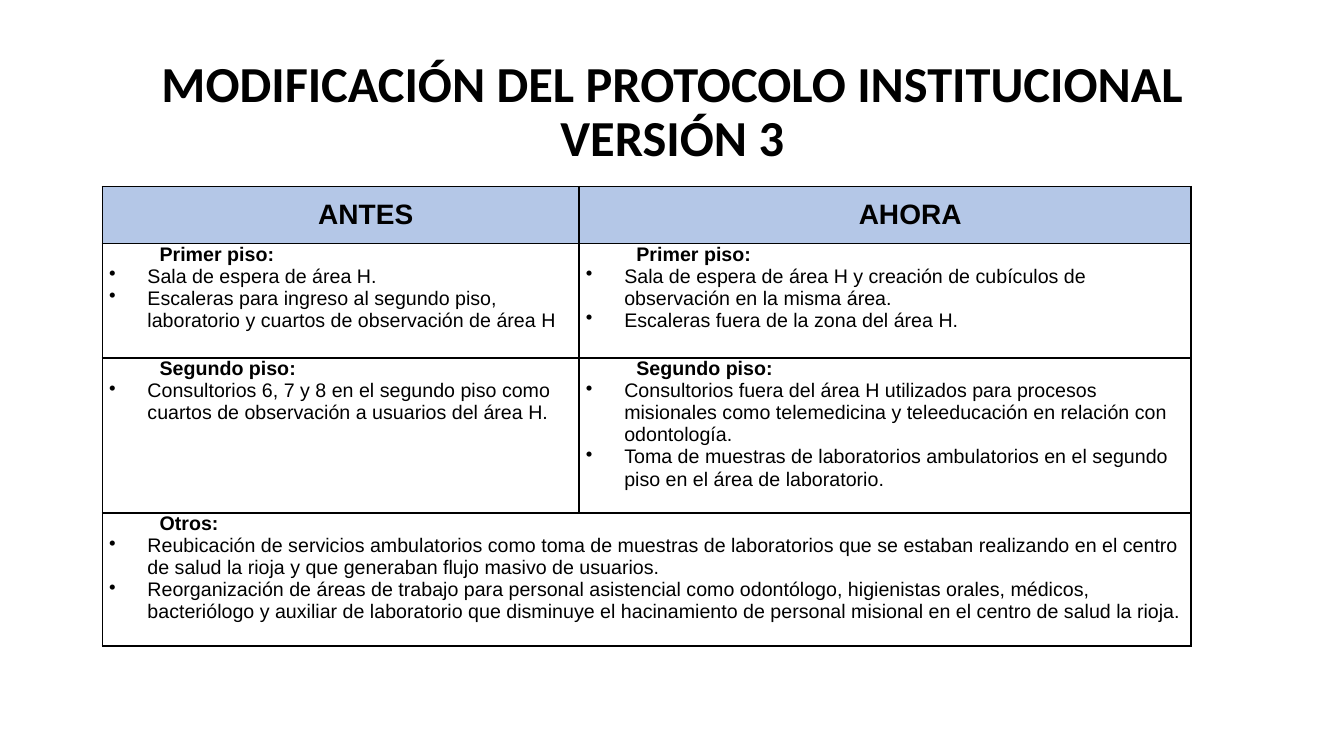
from dataclasses import dataclass

import pptx
import pptx.dml.color
import pptx.enum.text
import pptx.oxml
import pptx.oxml.ns
import pptx.presentation
import pptx.slide
import pptx.table
import pptx.text.text
import pptx.util

SLIDE_WIDTH = pptx.util.Inches(13.33)
SLIDE_HEIGHT = pptx.util.Inches(7.5)
COLORS = {"text": "000000", "border": "000000", "header": "B4C7E7", "body": "FFFFFF"}
TITLE_FONT = "Calibri"
TABLE_FONT = "Arial"

# Percentages of the slide's width (columns) and height (rows)
COLUMN_SHARES = (35.48, 45.54)
ROW_SHARES = (7.5, 15.2, 20.5, 17.6)

HEADING_INDENT = pptx.util.Inches(0.5)
BULLET_INDENT = pptx.util.Inches(0.38)
CENTER = pptx.enum.text.PP_ALIGN.CENTER
MIDDLE = pptx.enum.text.MSO_ANCHOR.MIDDLE


@dataclass(frozen=True)
class Entry:
    row: int
    column: int
    heading: str
    points: tuple[str, ...] = ()


ENTRIES = (
    Entry(0, 0, "ANTES"),
    Entry(0, 1, "AHORA"),
    Entry(1, 0, "Primer piso:", (
        "Sala de espera de área H.",
        "Escaleras para ingreso al segundo piso, laboratorio y cuartos de "
        "observación de área H",
    )),
    Entry(1, 1, "Primer piso:", (
        "Sala de espera de área H y creación de cubículos de observación en la misma área.",
        "Escaleras fuera de la zona del área H.",
    )),
    Entry(2, 0, "Segundo piso:", (
        "Consultorios 6, 7 y 8 en el segundo piso como cuartos de observación "
        "a usuarios del área H.",
    )),
    Entry(2, 1, "Segundo piso:", (
        "Consultorios fuera del área H utilizados para procesos misionales como "
        "telemedicina y teleeducación en relación con odontología.",
        "Toma de muestras de laboratorios ambulatorios en el segundo piso en el "
        "área de laboratorio.",
    )),
    Entry(3, 0, "Otros:", (
        "Reubicación de servicios ambulatorios como toma de muestras de laboratorios "
        "que se estaban realizando en el centro de salud la rioja y que generaban "
        "flujo masivo de usuarios.",
        "Reorganización de áreas de trabajo para personal asistencial como odontólogo, "
        "higienistas orales, médicos, bacteriólogo y auxiliar de laboratorio que "
        "disminuye el hacinamiento de personal misional en el centro de salud la rioja.",
    )),
)


def across(percent: float) -> int:
    return round(SLIDE_WIDTH * percent / 100)


def down(percent: float) -> int:
    return round(SLIDE_HEIGHT * percent / 100)


def rgb(name: str) -> pptx.dml.color.RGBColor:
    return pptx.dml.color.RGBColor.from_string(COLORS[name])


def add_run(paragraph: pptx.text.text._Paragraph, text: str, font: str,
            size: float, bold: bool) -> None:
    run = paragraph.add_run()
    run.text = text
    run.font.name = font
    run.font.size = pptx.util.Pt(size)
    run.font.bold = bold
    run.font.color.rgb = rgb("text")


def indent(paragraph: pptx.text.text._Paragraph, left: int, bullet: bool = False) -> None:
    properties = paragraph._p.get_or_add_pPr()
    properties.set("marL", str(left))
    properties.set("indent", str(-left if bullet else 0))
    if bullet:
        mark = pptx.oxml.parse_xml(
            f'<a:buChar {pptx.oxml.ns.nsdecls("a")} char="•"/>')
        properties.append(mark)


def add_borders(cell: pptx.table._Cell) -> None:
    properties = cell._tc.get_or_add_tcPr()
    for side in ("lnL", "lnR", "lnT", "lnB"):
        properties.append(pptx.oxml.parse_xml(
            f'<a:{side} {pptx.oxml.ns.nsdecls("a")} w="{pptx.util.Pt(1)}">'
            f'<a:solidFill><a:srgbClr val="{COLORS["border"]}"/></a:solidFill>'
            f'</a:{side}>'))


def fill_entry(cell: pptx.table._Cell, entry: Entry) -> None:
    is_header = entry.row == 0
    heading = cell.text_frame.paragraphs[0]
    indent(heading, HEADING_INDENT)
    add_run(heading, entry.heading, TABLE_FONT, 20 if is_header else 14, True)
    if is_header:
        heading.alignment = CENTER
        cell.vertical_anchor = MIDDLE
    for point in entry.points:
        paragraph = cell.text_frame.add_paragraph()
        indent(paragraph, BULLET_INDENT, bullet=True)
        add_run(paragraph, point, TABLE_FONT, 14, False)


def add_title(slide: pptx.slide.Slide) -> None:
    title = slide.shapes.title
    title.left, title.top = across(6.9), down(5.33)
    title.width, title.height = across(86.25), down(19.33)
    frame = title.text_frame
    frame.word_wrap = True
    frame.auto_size = pptx.enum.text.MSO_AUTO_SIZE.NONE
    frame.vertical_anchor = MIDDLE
    paragraph = frame.paragraphs[0]
    paragraph.alignment = CENTER
    paragraph.line_spacing = 0.9
    add_run(paragraph, "MODIFICACIÓN DEL PROTOCOLO INSTITUCIONAL VERSIÓN 3",
            TITLE_FONT, 36, True)


def add_comparison(slide: pptx.slide.Slide) -> None:
    comparison = slide.shapes.add_table(
        len(ROW_SHARES), len(COLUMN_SHARES), across(7.6), down(24.67),
        across(sum(COLUMN_SHARES)), down(sum(ROW_SHARES))).table
    comparison.horz_banding = False
    for column, share in zip(comparison.columns, COLUMN_SHARES):
        column.width = across(share)
    for row, share in zip(comparison.rows, ROW_SHARES):
        row.height = down(share)
    for index, row in enumerate(comparison.rows):
        for cell in row.cells:
            cell.margin_left = cell.margin_right = pptx.util.Inches(0.07)
            cell.margin_top = cell.margin_bottom = 0
            add_borders(cell)
            cell.fill.solid()
            cell.fill.fore_color.rgb = rgb("body" if index else "header")
    comparison.cell(3, 0).merge(comparison.cell(3, 1))
    for entry in ENTRIES:
        fill_entry(comparison.cell(entry.row, entry.column), entry)


def main() -> None:
    presentation = pptx.Presentation()
    presentation.slide_width = SLIDE_WIDTH
    presentation.slide_height = SLIDE_HEIGHT
    slide = presentation.slides.add_slide(presentation.slide_layouts[5])
    add_title(slide)
    add_comparison(slide)
    presentation.save("out.pptx")


if __name__ == "__main__":
    main()
